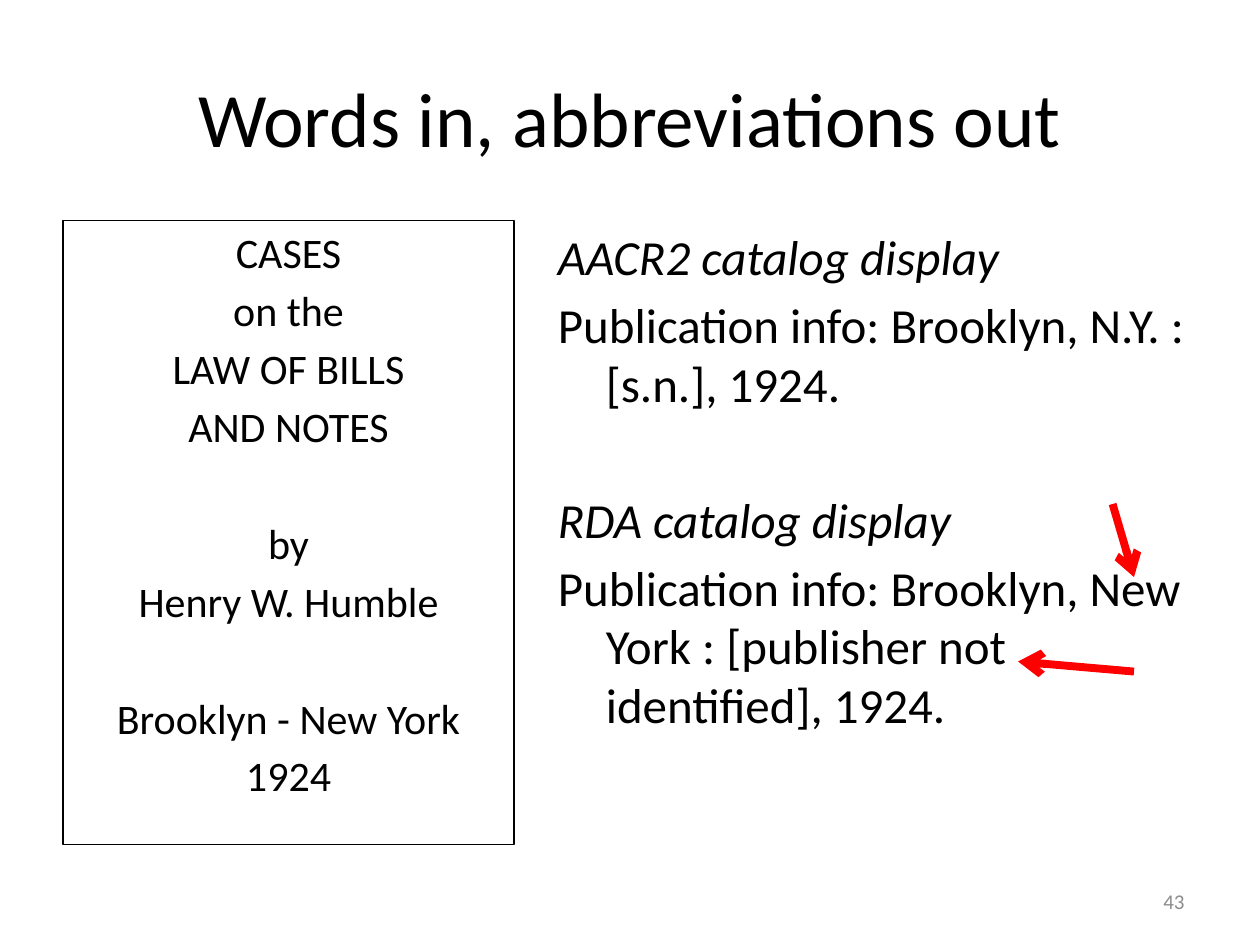
from dataclasses import dataclass

from lxml.etree import SubElement
from pptx import Presentation
from pptx.dml.color import RGBColor
from pptx.enum.shapes import MSO_CONNECTOR, MSO_SHAPE
from pptx.enum.text import MSO_ANCHOR, PP_ALIGN
from pptx.oxml.ns import qn
from pptx.util import Inches, Pt


@dataclass(frozen=True)
class Theme:
    font: str = "Calibri"
    ink: RGBColor = RGBColor(0, 0, 0)
    muted: RGBColor = RGBColor(0x8C, 0x8C, 0x8C)
    accent: RGBColor = RGBColor(0xFF, 0, 0)
    title: int = 44
    display: int = 28
    title_page: int = 24
    number: int = 12
    line_height: float = 1.22
    paragraph_gap: float = 0.18
    hang: float = 0.38


THEME = Theme()
WIDTH, HEIGHT = 10, 7.5
MARGIN = 0.05 * WIDTH
BODY_TOP, BODY_HEIGHT = 1.75, 0.66 * HEIGHT

# Each inner list is a group, set apart from the one before it
TITLE_PAGE = [
    ["CASES", "on the", "LAW OF BILLS", "AND NOTES"],
    ["by", "Henry W. Humble"],
    ["Brooklyn - New York", "1924"],
]
DISPLAYS = [
    ["AACR2 catalog display", "Publication info: Brooklyn, N.Y. : [s.n.], 1924."],
    ["RDA catalog display",
     "Publication info: Brooklyn, New York : [publisher not identified], 1924."],
]
ARROWS = [((8.83, 4), (9, 4.58)), ((9, 5.33), (8.08, 5.25))]


def set_font(p, size, color=THEME.ink, italic=False):
    p.font.name = THEME.font
    p.font.size = Pt(size)
    p.font.color.rgb = color
    p.font.italic = italic


def add_line(slide, box, text, size, align, color=THEME.ink):
    """A single line of text, centred vertically in its box."""
    tf = slide.shapes.add_textbox(*map(Inches, box)).text_frame
    tf.word_wrap = True
    tf.vertical_anchor = MSO_ANCHOR.MIDDLE
    p = tf.paragraphs[0]
    p.text = text
    p.alignment = align
    set_font(p, size, color)


def fill_groups(tf, groups, size, align, hang=0, italic_heads=False):
    """Paragraphs in groups, with one line of space between groups."""
    tf.word_wrap = True
    tf.vertical_anchor = MSO_ANCHOR.TOP
    gap = THEME.paragraph_gap * size
    group_gap = THEME.line_height * size + 2 * gap
    p = tf.paragraphs[0]
    for g, group in enumerate(groups):
        for i, text in enumerate(group):
            if g or i:
                p = tf.add_paragraph()
                p.space_before = Pt(gap if i else group_gap)
            p.text = text
            p.alignment = align
            if hang:
                pPr = p._p.get_or_add_pPr()
                pPr.set("marL", str(Inches(hang)))
                pPr.set("indent", str(-Inches(hang)))
            set_font(p, size, italic=italic_heads and i == 0)


def add_title_page(slide, box):
    sp = slide.shapes.add_shape(MSO_SHAPE.RECTANGLE, *map(Inches, box))
    sp.shadow.inherit = False
    sp.fill.background()
    sp.line.color.rgb = THEME.ink
    sp.line.width = Pt(0.75)
    fill_groups(sp.text_frame, TITLE_PAGE, THEME.title_page, PP_ALIGN.CENTER)


def add_displays(slide, box):
    sp = slide.shapes.add_textbox(*map(Inches, box))
    fill_groups(sp.text_frame, DISPLAYS, THEME.display, PP_ALIGN.LEFT,
                THEME.hang, italic_heads=True)


def add_arrow(slide, start, end):
    line = slide.shapes.add_connector(
        MSO_CONNECTOR.STRAIGHT, *map(Inches, start + end))
    line.line.color.rgb = THEME.accent
    line.line.width = Pt(4.5)
    SubElement(line.line._get_or_add_ln(), qn("a:tailEnd"), type="arrow")
    SubElement(line._element.spPr, qn("a:effectLst"))


def main():
    prs = Presentation()
    prs.slide_width, prs.slide_height = Inches(WIDTH), Inches(HEIGHT)
    slide = prs.slides.add_slide(prs.slide_layouts[6])

    # Title
    add_line(slide, (MARGIN, 0.3, WIDTH - 2 * MARGIN, 1.25),
             "Words in, abbreviations out", THEME.title, PP_ALIGN.CENTER)

    # Title page on the left, catalog displays on the right
    add_title_page(slide, (MARGIN, BODY_TOP, 3.58, BODY_HEIGHT))
    add_displays(slide, (4.33, BODY_TOP, WIDTH - MARGIN - 4.33, BODY_HEIGHT))

    # Arrows to the spelled-out words
    for start, end in ARROWS:
        add_arrow(slide, start, end)

    # Slide number
    add_line(slide, (7.17, 6.95, 2.33, 0.4), "43", THEME.number,
             PP_ALIGN.RIGHT, THEME.muted)

    prs.save("out.pptx")


if __name__ == "__main__":
    main()
